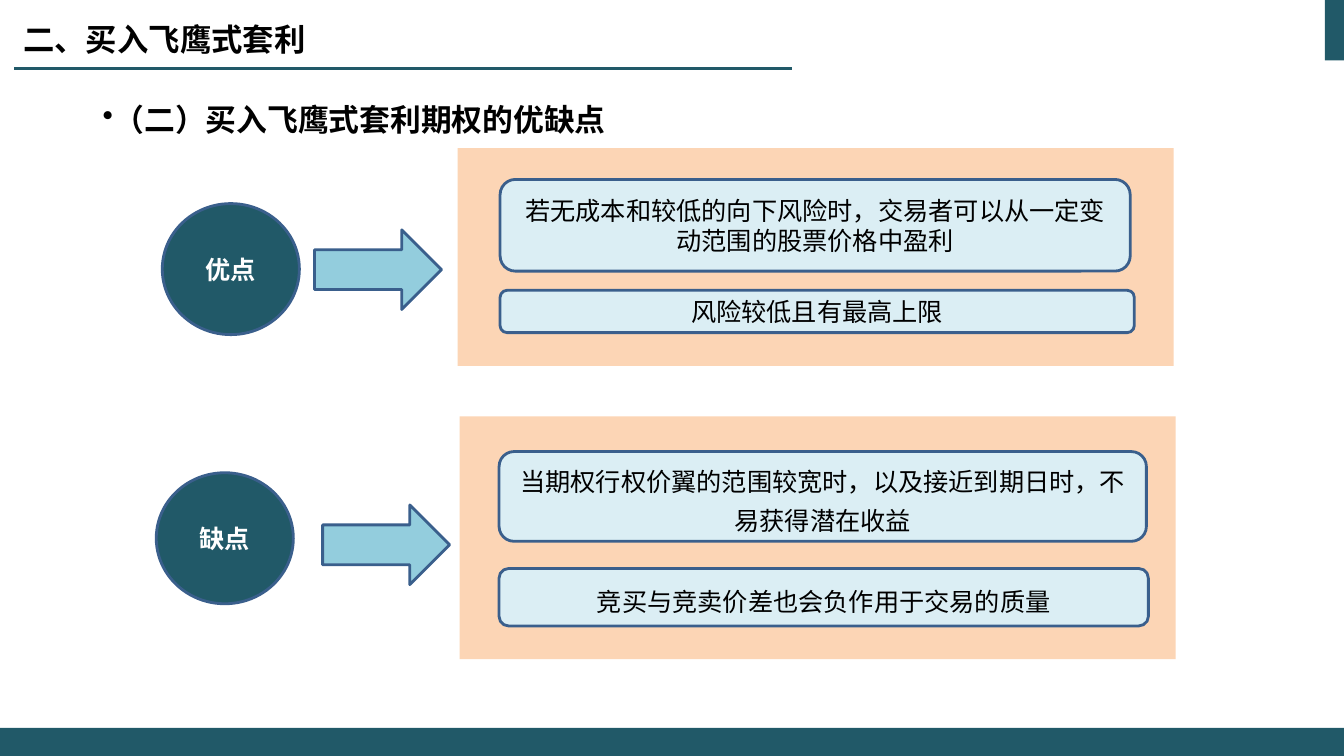
from dataclasses import dataclass

from lxml.etree import SubElement
from pptx import Presentation
from pptx.dml.color import RGBColor
from pptx.enum.shapes import MSO_CONNECTOR, MSO_SHAPE
from pptx.enum.text import MSO_ANCHOR, PP_ALIGN
from pptx.oxml.ns import qn
from pptx.util import Inches, Pt


@dataclass(frozen=True)
class Theme:
    teal: str = "215968"
    outline: str = "3A5F8C"
    peach: str = "FCD5B5"
    pale: str = "DBEEF4"
    sky: str = "93CDDD"
    black: str = "000000"
    white: str = "FFFFFF"
    sans: str = "Calibri"
    serif: str = "Times New Roman"
    cjk: str = "Noto Sans CJK SC"
    title: float = 28
    heading: float = 22
    body: float = 18
    border: float = 2
    rule: float = 1.5


T = Theme()
W, H = 13.33, 7.5


def rgb(value):
    return RGBColor.from_string(value)


def write(shape, text, size, color, font, bold=False, align=PP_ALIGN.CENTER, spacing=None):
    tf = shape.text_frame
    tf.word_wrap = True
    tf.vertical_anchor = MSO_ANCHOR.MIDDLE
    p = tf.paragraphs[0]
    p.text = text
    p.alignment = align
    if spacing:
        p.line_spacing = spacing
    f = p.font
    f.size, f.bold, f.name = Pt(size), bold, font
    f.color.rgb = rgb(color)
    return p


def add_block(shapes, kind, box, fill, outlined=True):
    sp = shapes.add_shape(kind, *map(Inches, box))
    sp.shadow.inherit = False
    sp.fill.solid()
    sp.fill.fore_color.rgb = rgb(fill)
    if outlined:
        sp.line.color.rgb = rgb(T.outline)
        sp.line.width = Pt(T.border)
    else:
        sp.line.fill.background()
    return sp


def add_frame(s):
    for box in ((W - 0.19, 0, 0.19, 0.6), (0, H - 0.28, W, 0.28)):
        add_block(s.shapes, MSO_SHAPE.RECTANGLE, box, T.teal, outlined=False)
    rule = s.shapes.add_connector(
        MSO_CONNECTOR.STRAIGHT, *map(Inches, (0.14, 0.68, 7.86, 0.68)))
    rule.line.color.rgb = rgb(T.teal)
    rule.line.width = Pt(T.rule)
    SubElement(rule._element.spPr, qn("a:effectLst"))


def add_title(s, box, text):
    sp = s.shapes.title
    sp.left, sp.top, sp.width, sp.height = map(Inches, box)
    p = write(sp, text, T.title, T.black, T.cjk, True, PP_ALIGN.LEFT)
    p._p.pPr.find(qn("a:defRPr")).set("cap", "small")


def add_heading(s, box, text):
    sp = s.shapes.add_textbox(*map(Inches, box))
    p = sp.text_frame.paragraphs[0]
    SubElement(p._p.get_or_add_pPr(), qn("a:buChar"), char="•")
    write(sp, text, T.heading, T.black, T.sans, True, PP_ALIGN.LEFT)


def add_side(s, box, label, circle, arrow, points, font, spacing=None):
    x, y, w, h = box
    shapes = s.shapes.add_group_shape().shapes
    add_block(shapes, MSO_SHAPE.RECTANGLE, box, T.peach, outlined=False)
    disc = add_block(shapes, MSO_SHAPE.OVAL, (x + circle[0], y + circle[1], 1.36, 1.3), T.teal)
    write(disc, label, T.body, T.white, T.sans, True)
    for text, dx, dy, pw, ph in points:
        sp = add_block(shapes, MSO_SHAPE.ROUNDED_RECTANGLE, (x + dx, y + dy, pw, ph), T.pale)
        write(sp, text, T.body, T.black, font, spacing=spacing)
    add_block(shapes, MSO_SHAPE.RIGHT_ARROW, (x + arrow[0], y + arrow[1], 1.26, 0.79), T.sky)


def main():
    prs = Presentation()
    prs.slide_width, prs.slide_height = Inches(W), Inches(H)
    s = prs.slides.add_slide(prs.slide_layouts[5])
    add_frame(s)
    add_title(s, (0.13, -0.11, 10.88, 0.93), "二、买入飞鹰式套利")
    add_heading(s, (0.92, 0.85, 11.76, 0.66), "（二）买入飞鹰式套利期权的优缺点")
    add_side(
        s, (4.54, 1.47, 7.1, 2.16), "优点", (-2.93, 0.55), (-1.42, 0.81),
        [("若无成本和较低的向下风险时，交易者可以从一定变动范围的股票价格中盈利", 0.42, 0.31, 6.25, 0.91),
         ("风险较低且有最高上限", 0.42, 1.41, 6.29, 0.42)],
        T.sans)
    add_side(
        s, (4.56, 4.13, 7.1, 2.41), "缺点", (-3.01, 0.56), (-1.36, 0.88),
        [("当期权行权价翼的范围较宽时，以及接近到期日时，不易获得潜在收益", 0.39, 0.35, 6.42, 0.89),
         ("竞买与竞卖价差也会负作用于交易的质量", 0.39, 1.51, 6.44, 0.57)],
        T.serif, 1.3)
    prs.save("out.pptx")


if __name__ == "__main__":
    main()
